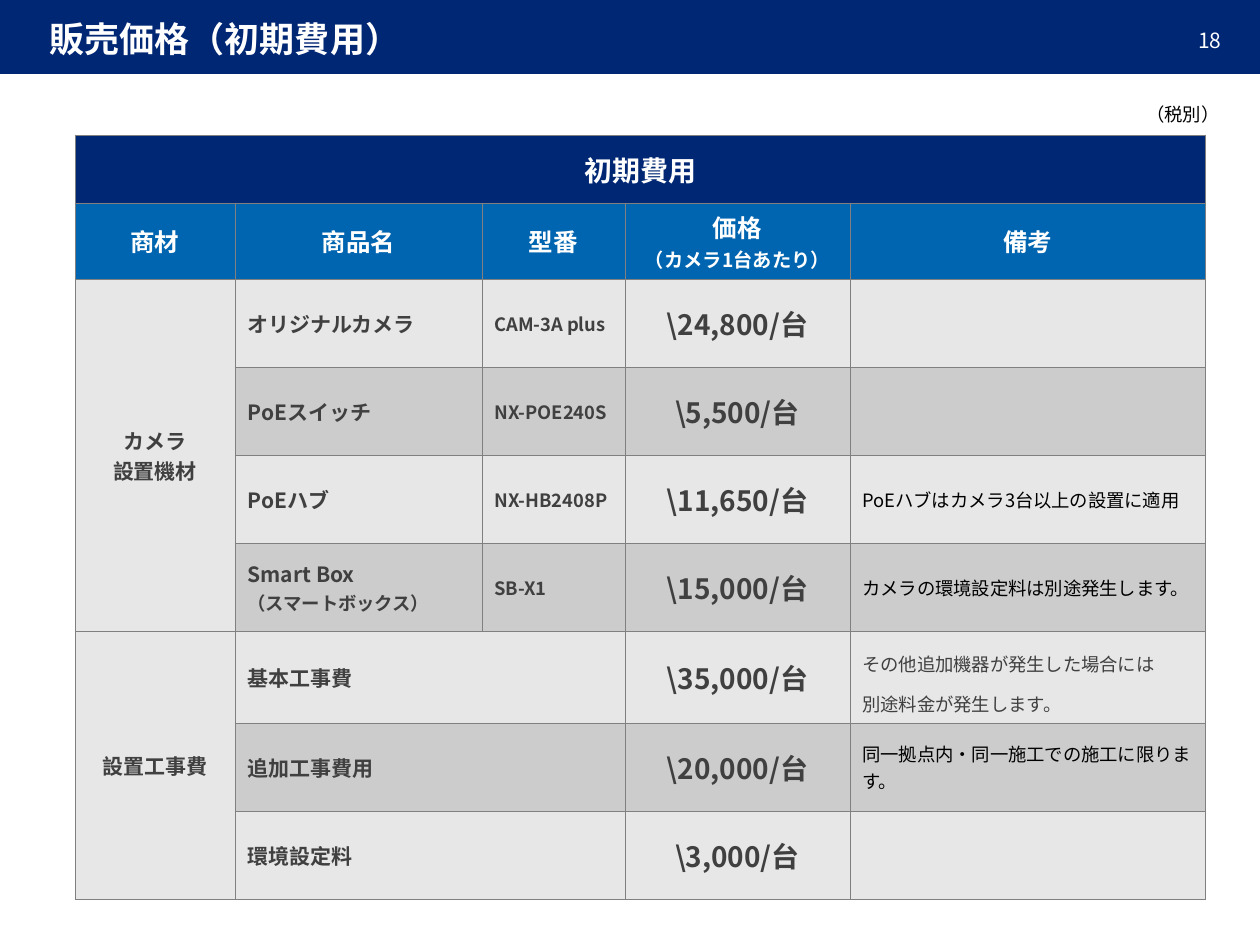
from lxml import etree
from pptx import Presentation
from pptx.dml import color
from pptx.enum import shapes, text
from pptx.oxml import ns
from pptx.util import Emu, Pt

SCALE = 914400 / 126
FONT = "Noto Sans CJK JP"
NAVY, BLUE, WHITE, BLACK = "002774", "0065B0", "FFFFFF", "000000"
LIGHT, MID, GRAY, BORDER = "E7E7E7", "CCCCCC", "404040", "808080"
LEFT, CENTER, RIGHT = text.PP_ALIGN.LEFT, text.PP_ALIGN.CENTER, text.PP_ALIGN.RIGHT


def px(length):
    return Emu(round(length * SCALE))


def rgb(value):
    return color.RGBColor.from_string(value)


class SlideBuilder:
    def __init__(self, page, font):
        self.page = page
        self.font = font

    def add_lines(self, frame, lines, ink, bold=False, align=LEFT, spacing=None):
        frame.word_wrap = True
        for index, (words, size) in enumerate(lines):
            para = frame.add_paragraph() if index else frame.paragraphs[0]
            para.alignment = align
            if spacing:
                para.line_spacing = spacing
            span = para.add_run()
            span.text = words
            span.font.size = Pt(size)
            span.font.bold = bold
            span.font.name = self.font
            span.font.color.rgb = rgb(ink)
            east = etree.SubElement(span.font._element, ns.qn("a:ea"))
            east.set("typeface", self.font)

    def bar(self, left, top, width, height, fill):
        box = self.page.shapes.add_shape(
            shapes.MSO_SHAPE.RECTANGLE, px(left), px(top), px(width), px(height))
        box.shadow.inherit = False
        box.fill.solid()
        box.fill.fore_color.rgb = rgb(fill)
        box.line.fill.background()

    def title(self, words, left, top, width, height):
        box = self.page.shapes.title
        self.page.shapes._spTree.append(box._element)
        box.left, box.top, box.width, box.height = map(px, (left, top, width, height))
        box.text_frame.auto_size = text.MSO_AUTO_SIZE.NONE
        box.text_frame.vertical_anchor = text.MSO_ANCHOR.MIDDLE
        self.add_lines(box.text_frame, [(words, 20)], WHITE, bold=True)

    def label(self, words, size, ink, left, top, width, height):
        box = self.page.shapes.add_textbox(px(left), px(top), px(width), px(height))
        box.text_frame.vertical_anchor = text.MSO_ANCHOR.MIDDLE
        self.add_lines(box.text_frame, [(words, size)], ink, align=RIGHT)

    def table(self, left, top, widths, heights):
        grid = self.page.shapes.add_table(
            len(heights), len(widths), px(left), px(top),
            px(sum(widths)), px(sum(heights))).table
        grid.first_row = grid.horz_banding = False
        for column, width in zip(grid.columns, widths):
            column.width = px(width)
        for row, height in zip(grid.rows, heights):
            row.height = px(height)
        return grid

    def cell(self, cell, fill):
        properties = cell._tc.get_or_add_tcPr()
        for side in ("lnL", "lnR", "lnT", "lnB"):
            line = etree.SubElement(properties, ns.qn(f"a:{side}"), w=str(Pt(0.5)))
            solid = etree.SubElement(line, ns.qn("a:solidFill"))
            etree.SubElement(solid, ns.qn("a:srgbClr"), val=BORDER)
        cell.fill.solid()
        cell.fill.fore_color.rgb = rgb(fill)
        cell.vertical_anchor = text.MSO_ANCHOR.MIDDLE


HEADERS = [
    [("商材", 14)],
    [("商品名", 14)],
    [("型番", 14)],
    [("価格", 14), ("（カメラ1台あたり）", 11)],
    [("備考", 14)],
]
GROUPS = [(2, 5, ["カメラ", "設置機材"]), (6, 8, ["設置工事費"])]
ITEMS = [
    (["オリジナルカメラ"], "CAM-3A plus", "24,800", []),
    (["PoEスイッチ"], "NX-POE240S", "5,500", []),
    (["PoEハブ"], "NX-HB2408P", "11,650", ["PoEハブはカメラ3台以上の設置に適用"]),
    (["Smart Box", "（スマートボックス）"], "SB-X1", "15,000",
     ["カメラの環境設定料は別途発生します。"]),
    (["基本工事費"], None, "35,000",
     ["その他追加機器が発生した場合には", "別途料金が発生します。"]),
    (["追加工事費用"], None, "20,000", ["同一拠点内・同一施工での施工に限ります。"]),
    (["環境設定料"], None, "3,000", []),
]


def fill_table(slide):
    grid = slide.table(75, 135, [160, 247, 143, 225, 356],
                       [68, 76, 88, 88, 88, 88, 92, 88, 88])
    fills = [NAVY, BLUE] + [MID if index % 2 else LIGHT for index in range(len(ITEMS))]
    for row, fill in enumerate(fills):
        for column in range(len(HEADERS)):
            slide.cell(grid.cell(row, column), LIGHT if row > 1 and column == 0 else fill)

    grid.cell(0, 0).merge(grid.cell(0, 4))
    slide.add_lines(grid.cell(0, 0).text_frame, [("初期費用", 16)], WHITE, True, CENTER)
    for column, lines in enumerate(HEADERS):
        slide.add_lines(grid.cell(1, column).text_frame, lines, WHITE, True, CENTER)
    for first, last, lines in GROUPS:
        grid.cell(first, 0).merge(grid.cell(last, 0))
        slide.add_lines(grid.cell(first, 0).text_frame, [(line, 12) for line in lines],
                        GRAY, True, CENTER)

    for row, (names, model, price, notes) in enumerate(ITEMS, 2):
        name, code, cost, note = (grid.cell(row, column) for column in range(1, 5))
        slide.add_lines(name.text_frame, list(zip(names, (12, 10.5))), GRAY, True)
        if model:
            slide.add_lines(code.text_frame, [(model, 10.5)], GRAY, True)
        else:
            name.merge(code)
        slide.add_lines(cost.text_frame, [(f"\\{price}/台", 16)], GRAY, True, CENTER)
        several = len(notes) > 1
        slide.add_lines(note.text_frame, [(line, 10.5) for line in notes],
                        GRAY if several else BLACK, spacing=1.5 if several else None)


def main():
    deck = Presentation()
    deck.slide_width, deck.slide_height = px(1260), px(945)
    slide = SlideBuilder(deck.slides.add_slide(deck.slide_layouts[5]), FONT)
    slide.bar(0, 0, 1260, 74, NAVY)
    slide.label("18", 12, WHITE, 1145, 15, 89, 50)
    slide.title("販売価格（初期費用）", 37, 9, 1000, 59)
    fill_table(slide)
    slide.label("（税別）", 10.5, BLACK, 1104, 97, 128, 35)
    deck.save("out.pptx")


if __name__ == "__main__":
    main()
